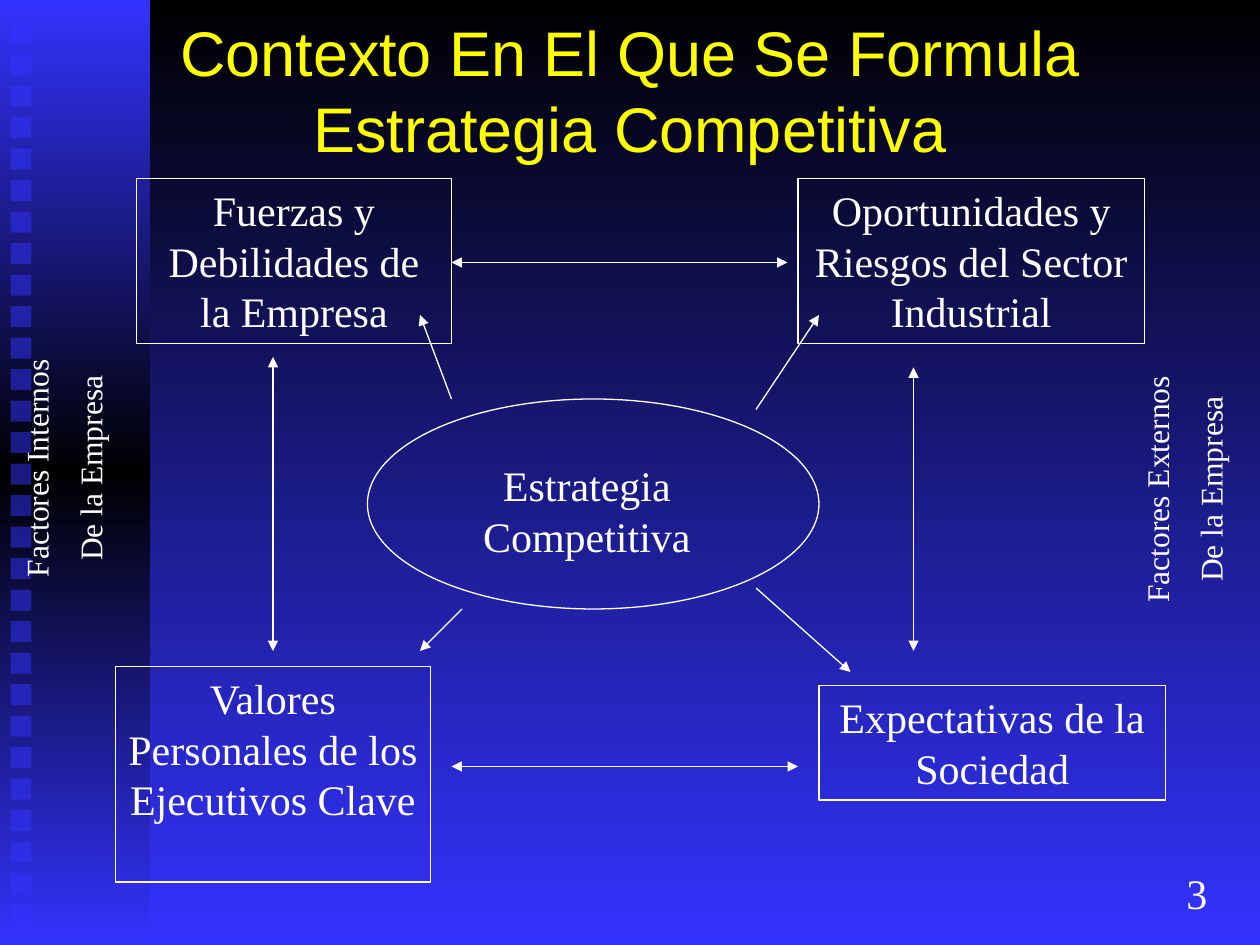
from copy import deepcopy
from dataclasses import dataclass

from lxml.etree import SubElement
from pptx import Presentation
from pptx.dml.color import RGBColor
from pptx.enum.shapes import MSO_CONNECTOR, MSO_SHAPE
from pptx.enum.text import MSO_ANCHOR, PP_ALIGN
from pptx.oxml.ns import qn
from pptx.util import Inches, Pt


@dataclass(frozen=True)
class Theme:
    """Colours, fonts, type sizes and line width of the deck."""

    blue: RGBColor = RGBColor(0x33, 0x33, 0xFF)
    black: RGBColor = RGBColor(0, 0, 0)
    white: RGBColor = RGBColor(0xFF, 0xFF, 0xFF)
    yellow: RGBColor = RGBColor(0xFF, 0xFF, 0)
    heading_font: str = "Arial"
    body_font: str = "Times New Roman"
    heading_size: int = 36
    body_size: int = 24
    side_size: int = 18
    leading: float = 1.2
    line_width: float = 0.75


class SlideBuilder:
    """Draws on one slide with a grid of 120 columns and 90 rows."""

    columns, rows = 120, 90

    def __init__(self, deck, theme):
        """Add a title-only slide to the deck."""
        self.deck = deck
        self.theme = theme
        self.slide = deck.slides.add_slide(deck.slide_layouts[5])

    def place(self, left, top, width, height):
        """Turn grid cells into slide lengths."""
        column = self.deck.slide_width / self.columns
        row = self.deck.slide_height / self.rows
        return [round(n) for n in (left * column, top * row, width * column, height * row)]

    def gradient(self, fill, colors):
        """Apply a top-to-bottom gradient to a fill with matching stops."""
        fill.gradient_angle = 270
        for index, (stop, color) in enumerate(zip(fill.gradient_stops, colors)):
            stop.position = index / (len(colors) - 1)
            stop.color.rgb = color

    def background(self, *colors):
        """Fill the slide background with a two-colour gradient."""
        fill = self.slide.background.fill
        fill.gradient()
        self.gradient(fill, colors)

    def shape(self, kind, cells):
        """Add a preset shape without shadow, fill or line."""
        shape = self.slide.shapes.add_shape(kind, *self.place(*cells))
        shape.shadow.inherit = False
        shape.fill.background()
        shape.line.fill.background()
        return shape

    def band(self, cells, *colors):
        """Add a rectangle with a three-colour gradient."""
        band = self.shape(MSO_SHAPE.RECTANGLE, cells)
        band.fill.gradient()
        stops = next(band.element.iter(qn("a:gsLst")))
        stops.append(deepcopy(stops[-1]))
        self.gradient(band.fill, colors)

    def mark(self, cells):
        """Add a half-transparent square."""
        mark = self.shape(MSO_SHAPE.RECTANGLE, cells)
        mark.fill.solid()
        mark.fill.fore_color.rgb = self.theme.blue
        color = next(mark.element.iter(qn("a:srgbClr")))
        SubElement(color, qn("a:alpha"), val="50000")

    def set_lines(self, frame, lines, size, align=PP_ALIGN.CENTER, gap=0):
        """Put one paragraph per line in the body style."""
        frame.word_wrap = True
        frame.vertical_anchor = MSO_ANCHOR.TOP
        for index, line in enumerate(lines):
            para = frame.paragraphs[0] if index == 0 else frame.add_paragraph()
            para.text = line
            para.space_before = Pt(gap if index else 0)
            self.style(para, self.theme.body_font, size, self.theme.white, align)

    def style(self, para, font, size, color, align):
        """Set font, colour, alignment and leading of a paragraph."""
        para.alignment = align
        para.line_spacing = Pt(size * self.theme.leading)
        para.font.name = font
        para.font.size = Pt(size)
        para.font.color.rgb = color

    def title(self, cells, first, second):
        """Format the title placeholder and fill its two lines."""
        title = self.slide.shapes.title
        title.left, title.top, title.width, title.height = self.place(*cells)
        title.text_frame.vertical_anchor = MSO_ANCHOR.MIDDLE
        para = title.text_frame.paragraphs[0]
        para.add_run().text = first
        para.add_line_break()
        para.add_run().text = second
        theme = self.theme
        self.style(para, theme.heading_font, theme.heading_size, theme.yellow, PP_ALIGN.CENTER)

    def outline(self, kind, cells, *lines):
        """Add an outlined shape with optional text."""
        shape = self.shape(kind, cells)
        shape.line.color.rgb = self.theme.white
        shape.line.width = Pt(self.theme.line_width)
        self.set_lines(shape.text_frame, lines, self.theme.body_size)

    def label(self, cells, *lines, align=PP_ALIGN.CENTER):
        """Add a text box in the body size."""
        box = self.slide.shapes.add_textbox(*self.place(*cells))
        self.set_lines(box.text_frame, lines, self.theme.body_size, align)

    def side_label(self, cells, *lines):
        """Add a text box that reads upwards."""
        box = self.slide.shapes.add_textbox(*self.place(*cells))
        box.rotation = 270
        size = self.theme.side_size
        self.set_lines(box.text_frame, lines, size, gap=size / 2)

    def arrow(self, start, end, *ends):
        """Add a straight line with triangles at the named ends."""
        points = self.place(*start, *end)
        arrow = self.slide.shapes.add_connector(MSO_CONNECTOR.STRAIGHT, *points)
        arrow.line.color.rgb = self.theme.white
        arrow.line.width = Pt(self.theme.line_width)
        line = next(arrow.element.iter(qn("a:ln")))
        for name in ends:
            SubElement(line, qn(f"a:{name}"), type="triangle")
        SubElement(line.getparent(), qn("a:effectLst"))


def main():
    """Build the competitive strategy slide."""
    deck = Presentation()
    deck.slide_width, deck.slide_height = Inches(10), Inches(7.5)
    theme = Theme()
    page = SlideBuilder(deck, theme)

    page.background(theme.black, theme.blue)
    page.band((0, 0, 14.3, 90), theme.blue, theme.black, theme.blue)
    for index in range(29):
        page.mark((1, 2.15 + 3 * index, 2, 2))

    page.title((0, 1, 120, 15), "Contexto En El Que Se Formula", "Estrategia Competitiva")
    page.outline(MSO_SHAPE.OVAL, (35, 38, 43, 20))
    page.label((43.8, 43.2, 24.2, 10.8), "Estrategia", "Competitiva")

    factors = [
        ((13, 17, 30, 15.7), "Fuerzas y Debilidades de la Empresa"),
        ((76, 17, 33, 15.7), "Oportunidades y Riesgos del Sector Industrial"),
        ((11, 63.5, 30, 20.5), "Valores Personales de los Ejecutivos Clave"),
        ((78, 65.3, 33, 10.9), "Expectativas de la Sociedad"),
    ]
    for cells, text in factors:
        page.outline(MSO_SHAPE.RECTANGLE, cells, text)

    page.side_label((-11.2, 39.5, 34.7, 10.2), "Factores Internos", "De la Empresa")
    page.side_label((95.5, 41.5, 34.7, 10.2), "Factores Externos", "De la Empresa")

    between_factors = [
        ((43, 25), (75, 25)),
        ((43, 73), (76, 73)),
        ((26, 34), (26, 62)),
        ((87, 35), (87, 62)),
    ]
    for start, end in between_factors:
        page.arrow(start, end, "headEnd", "tailEnd")

    from_strategy = [
        ((43, 38), (40, 30)),
        ((72, 39), (78, 30)),
        ((72, 56), (81, 64)),
        ((44, 58), (40, 62)),
    ]
    for start, end in from_strategy:
        page.arrow(start, end, "tailEnd")

    page.label((111.8, 82, 4.7, 6), "3", align=PP_ALIGN.LEFT)
    deck.save("out.pptx")


if __name__ == "__main__":
    main()
